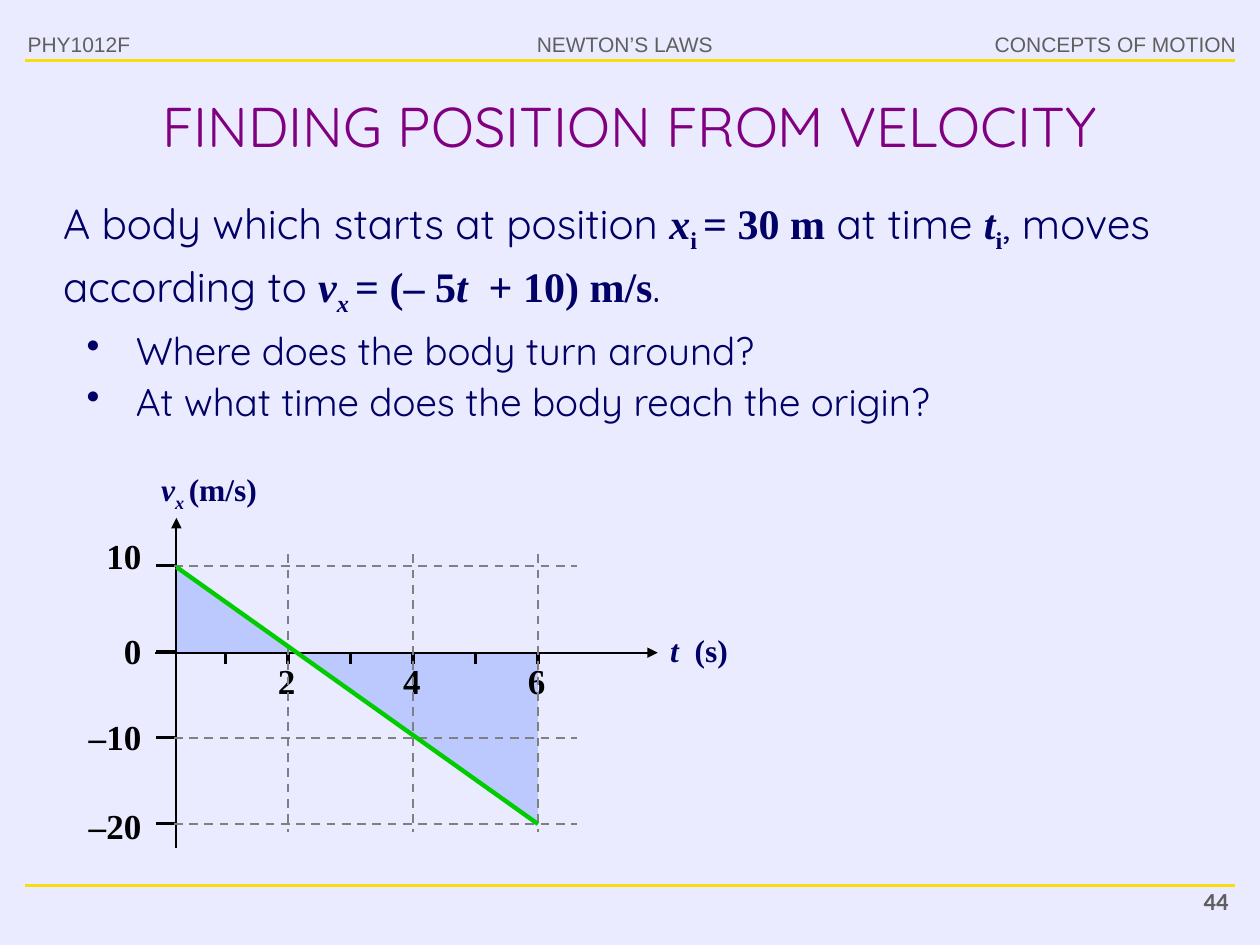
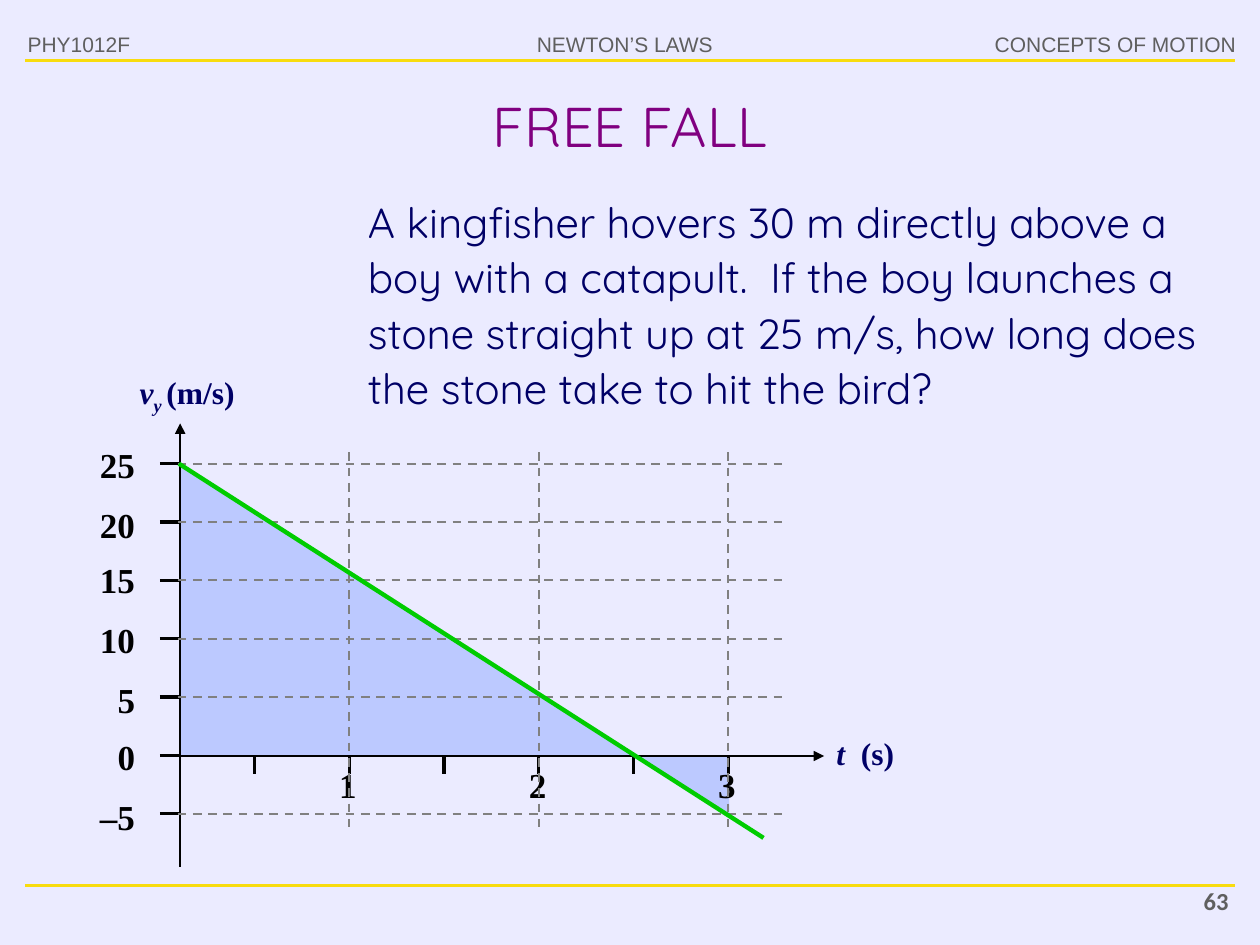
from pptx import Presentation
from pptx.dml.color import RGBColor
from pptx.enum.dml import MSO_LINE
from pptx.enum.shapes import MSO_CONNECTOR
from pptx.enum.text import MSO_ANCHOR, MSO_AUTO_SIZE, PP_ALIGN
from pptx.oxml.ns import qn
from pptx.util import Inches, Pt
from lxml.etree import SubElement

BACKGROUND, YELLOW, GREY, PURPLE = "EBEBFF", "F8DC0E", "5F5F5F", "800080"
NAVY, BLACK, GRID_GREY, GREEN, BLUE = "000066", "000000", "808080", "00CC00", "3366FF"
TEXT_FONT, MATH_FONT = "Quicksand", "Times New Roman"
LEFT, CENTER, RIGHT = PP_ALIGN.LEFT, PP_ALIGN.CENTER, PP_ALIGN.RIGHT

HEADERS = [
    ("PHY1012F", (0.12, 0.2, 1.18, 0.32), LEFT),
    ("NEWTON’S LAWS", (3.96, 0.2, 2, 0.3), CENTER),
    ("CONCEPTS OF MOTION", (7.41, 0.2, 2.5, 0.3), RIGHT),
]
RULE_TOPS = [0.48, 7.03]

# Math styles: b bold, i italic, s subscript; an empty style is body text.
SLIDES = [
    {
        "title": "FINDING POSITION FROM VELOCITY",
        "number": "44",
        "body_box": (0.2, 1.47, 9.6, 0.98),
        "body": [
            ("A body which starts at position ", ""), ("x", "bi"), ("i ", "bs"),
            ("= 30 m", "b"), (" at time ", ""), ("t", "bi"), ("i", "bs"),
            (", moves according to ", ""), ("v", "bi"), ("x ", "bis"),
            ("= (– 5", "b"), ("t", "bi"), ("  + 10) m/s", "b"), (".", ""),
        ],
        "questions": [
            "Where does the body turn around?",
            "At what time does the body reach the origin?",
        ],
        "graph": {
            "origin": (1.4, 5.18),
            "time_axis": (1.23, 5.22),
            "velocity_axis": (6.73, 4.11),
            "time_ticks": {"first": 1.79, "step": 0.496, "length": 0.09},
            "time_labels": ["2", "4", "6"],
            "velocity_ticks": {"first": 4.49, "step": 0.683},
            "velocity_labels": [("10", 4.18), ("0", 4.93), ("–10", 5.61), ("–20", 6.32)],
            "label_right": 1.22,
            "grid": (4.4, 6.6, 4.58),
            "area": [(1.4, 4.49), (1.4, 5.18), (4.27, 5.18), (4.27, 6.53)],
            "line": [(1.4, 4.5), (4.27, 6.54)],
            "velocity_name": ("x ", (0.98, 3.65, 1.28, 0.43)),
            "time_name_box": (5.02, 4.93, 1.07, 0.43),
        },
    },
    {
        "title": "FREE FALL",
        "number": "63",
        "body_box": (2.62, 1.47, 7.17, 1.86),
        "body": [
            ("A kingfisher hovers 30 m directly above a boy with a catapult.  "
             "If the boy launches a stone straight up at 25 m/s, how long does "
             "the stone take to hit the bird?", ""),
        ],
        "questions": [],
        "graph": {
            "origin": (1.43, 6),
            "time_axis": (1.41, 6.54),
            "velocity_axis": (6.88, 3.36),
            "time_ticks": {"first": 2.02, "step": 0.752, "length": 0.14},
            "time_labels": ["1", "2", "3"],
            "velocity_ticks": {"first": 3.68, "step": 0.463},
            "velocity_labels": [("25", 3.45), ("20", 3.93), ("15", 4.37), ("10", 4.84),
                                ("5", 5.32), ("0", 5.77), ("–5", 6.25)],
            "label_right": 1.17,
            "grid": (3.59, 6.56, 6.25),
            "area": [(5.79, 6.46), (5.78, 6), (1.43, 6), (1.43, 3.7)],
            "line": [(1.42, 3.68), (6.06, 6.65)],
            "velocity_name": ("y ", (0.81, 2.88, 1.32, 0.43)),
            "time_name_box": (6.34, 5.75, 0.97, 0.43),
        },
    },
]


def color(value):
    return RGBColor.from_string(value)


def place(shape, box):
    shape.left, shape.top, shape.width, shape.height = map(Inches, box)
    shape.text_frame.word_wrap = True
    shape.text_frame.auto_size = MSO_AUTO_SIZE.NONE


def format_paragraph(paragraph, size, ink, font=None, bold=None, align=LEFT,
                     spacing=1.0, margin=0, indent=0, bullet=None):
    paragraph.alignment = align
    paragraph.line_spacing = spacing
    paragraph.space_before = Pt(0)
    properties = paragraph._p.get_or_add_pPr()
    properties.set("marL", str(Inches(margin)))
    properties.set("indent", str(Inches(indent)))
    if bullet:
        SubElement(properties, qn("a:buChar")).set("char", bullet)
    else:
        SubElement(properties, qn("a:buNone"))
    paragraph.font.size = Pt(size)
    paragraph.font.color.rgb = color(ink)
    if font:
        paragraph.font.name = font
    if bold is not None:
        paragraph.font.bold = bold


def add_text(slide, text, box, size, ink, font, **options):
    shape = slide.shapes.add_textbox(0, 0, 0, 0)
    place(shape, box)
    paragraph = shape.text_frame.paragraphs[0]
    paragraph.text = text
    format_paragraph(paragraph, size, ink, font, **options)


def write_runs(shape, runs, size):
    paragraph = shape.text_frame.paragraphs[0]
    format_paragraph(paragraph, size, NAVY, spacing=1.1, margin=0.2)
    for text, style in runs:
        run = paragraph.add_run()
        run.text = text
        run.font.name = MATH_FONT if style else TEXT_FONT
        run.font.bold = "b" in style
        run.font.italic = "i" in style
        if "s" in style:
            run._r.get_or_add_rPr().set("baseline", "-25000")


def add_line(slide, start, end, ink, width, dashed=False, arrow=False):
    connector = slide.shapes.add_connector(
        MSO_CONNECTOR.STRAIGHT, *map(Inches, (*start, *end)))
    connector.line.color.rgb = color(ink)
    connector.line.width = Pt(width)
    if dashed:
        connector.line.dash_style = MSO_LINE.DASH
    if arrow:
        SubElement(connector.line._get_or_add_ln(), qn("a:tailEnd")).set("type", "triangle")
    SubElement(connector._element.spPr, qn("a:effectLst"))


def add_area(slide, points):
    corners = [(Inches(x), Inches(y)) for x, y in points]
    builder = slide.shapes.build_freeform(*corners[0])
    builder.add_line_segments(corners[1:], close=True)
    area = builder.convert_to_shape()
    area.shadow.inherit = False
    area.fill.solid()
    area.fill.fore_color.rgb = color(BLUE)
    area.line.fill.background()
    fill_color = area._element.spPr.find(qn("a:solidFill")).find(qn("a:srgbClr"))
    SubElement(fill_color, qn("a:alpha")).set("val", "25000")


def add_axis_name(slide, runs, box):
    shape = slide.shapes.add_textbox(0, 0, 0, 0)
    place(shape, box)
    write_runs(shape, runs, 18)


def add_graph(slide, graph):
    origin_x, origin_y = graph["origin"]
    time, velocity = graph["time_ticks"], graph["velocity_ticks"]
    time_labels, velocity_labels = graph["time_labels"], graph["velocity_labels"]
    columns = [time["first"] + time["step"] * i for i in range(2 * len(time_labels))]
    rows = [velocity["first"] + velocity["step"] * i for i in range(len(velocity_labels))]
    label_style = dict(size=20, ink=BLACK, font=MATH_FONT, bold=True, spacing=1.05)

    add_area(slide, graph["area"])
    start, end = graph["time_axis"]
    add_line(slide, (start, origin_y), (end, origin_y), BLACK, 1.25, arrow=True)
    start, end = graph["velocity_axis"]
    add_line(slide, (origin_x, start), (origin_x, end), BLACK, 1.25, arrow=True)

    for x in columns:
        add_line(slide, (x, origin_y), (x, origin_y + time["length"]), BLACK, 1.75)
    for label, x in zip(time_labels, columns[1::2]):
        add_text(slide, label, (x - 0.31, origin_y - 0.01, 0.6, 0.45),
                 align=CENTER, **label_style)
    for (label, top), y in zip(velocity_labels, rows):
        add_line(slide, (origin_x - 0.16, y), (origin_x, y), BLACK, 1.75)
        add_text(slide, label, (graph["label_right"] - 0.79, top, 0.79, 0.45),
                 align=RIGHT, **label_style)

    top, bottom, right = graph["grid"]
    for (label, _), y in zip(velocity_labels, rows):
        if label != "0":
            add_line(slide, (origin_x - 0.02, y), (right, y), GRID_GREY, 1.25, dashed=True)
    for x in columns[1::2]:
        add_line(slide, (x, top), (x, bottom), GRID_GREY, 1.25, dashed=True)
    add_line(slide, *graph["line"], GREEN, 2.5)

    subscript, box = graph["velocity_name"]
    add_axis_name(slide, [("v", "bi"), (subscript, "bis"), ("(m/s)", "b")], box)
    add_axis_name(slide, [("t  ", "bi"), ("(s)", "b")], graph["time_name_box"])


def add_frame(slide, number):
    for top in RULE_TOPS:
        add_line(slide, (0.2, top), (9.8, top), YELLOW, 1.75)
    for text, box, align in HEADERS:
        add_text(slide, text, box, 12, GREY, "Arial", align=align)
    add_text(slide, number, (8.82, 6.98, 1.03, 0.37), 14, GREY, "Calibri",
             bold=True, align=RIGHT)


def add_questions(slide, questions):
    shape = slide.shapes.add_textbox(0, 0, 0, 0)
    place(shape, (0.2, 2.51, 9.6, 0.91))
    shape.text_frame.text = "\n".join(questions)
    for paragraph in shape.text_frame.paragraphs:
        format_paragraph(paragraph, 22, NAVY, TEXT_FONT, spacing=1.1,
                         margin=0.78, indent=-0.39, bullet="•")


def build_slide(presentation, content):
    slide = presentation.slides.add_slide(presentation.slide_layouts[1])
    add_frame(slide, content["number"])
    title, body = slide.shapes.title, slide.placeholders[1]
    place(title, (0.5, 0.63, 9, 0.72))
    title.text_frame.vertical_anchor = MSO_ANCHOR.MIDDLE
    title.text_frame.text = content["title"]
    format_paragraph(title.text_frame.paragraphs[0], 32, PURPLE, TEXT_FONT, align=CENTER)
    place(body, content["body_box"])
    write_runs(body, content["body"], 24)
    if content["questions"]:
        add_questions(slide, content["questions"])
    add_graph(slide, content["graph"])


def main():
    presentation = Presentation()
    presentation.slide_width, presentation.slide_height = Inches(10), Inches(7.5)
    background = presentation.slide_master.background.fill
    background.solid()
    background.fore_color.rgb = color(BACKGROUND)
    for content in SLIDES:
        build_slide(presentation, content)
    presentation.save("out.pptx")


if __name__ == "__main__":
    main()
